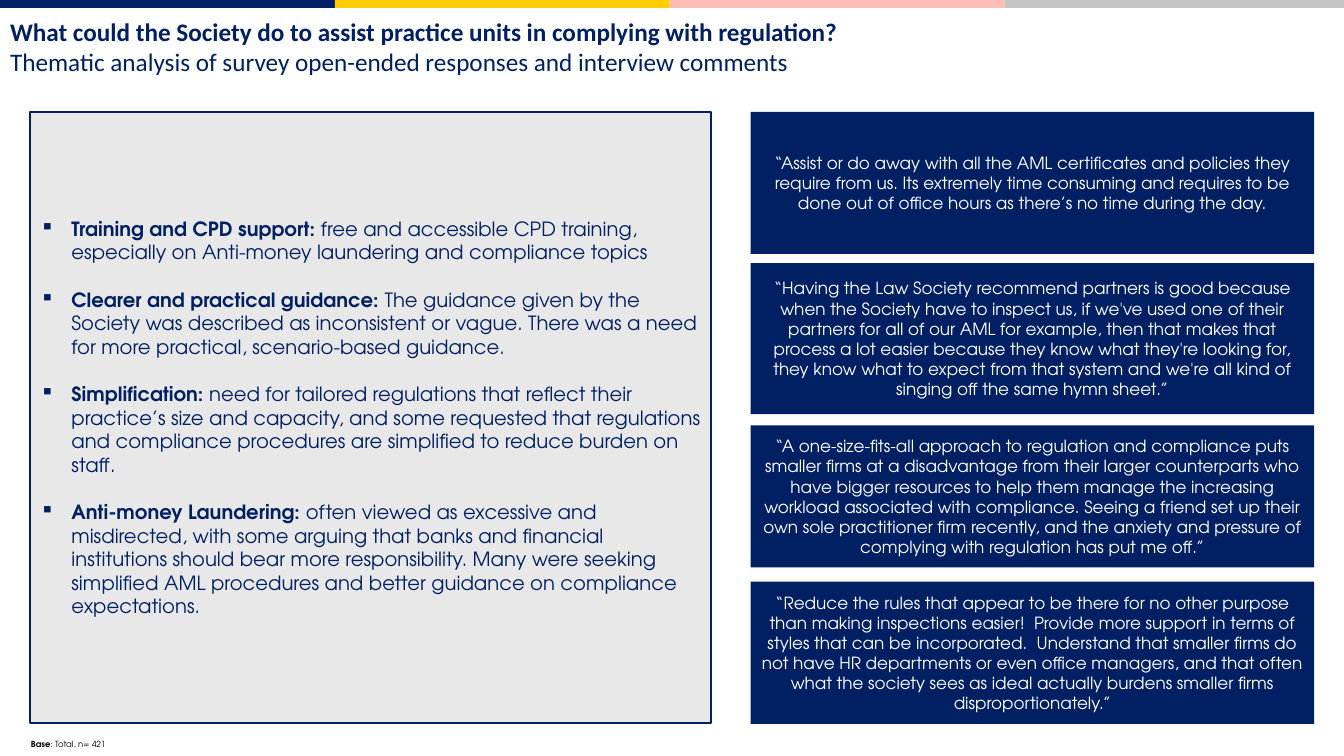
"""Build the slide on how the Society could help practice units comply with regulation."""
from lxml.etree import SubElement
from pptx import Presentation
from pptx.dml.color import RGBColor
from pptx.enum.shapes import MSO_SHAPE
from pptx.enum.text import MSO_ANCHOR, MSO_AUTO_SIZE, PP_ALIGN
from pptx.oxml.ns import qn
from pptx.util import Cm, Pt

NAVY, YELLOW, PINK, SILVER = "002063", "FFCD00", "FDBCB4", "C7C4C4"
PANEL, WHITE, BLACK = "E8E8E8", "FFFFFF", "000000"
BODY_FONT = "TeX Gyre Adventor"

TITLE_LINES = [
    ("What could the Society do to assist practice units in complying with regulation?", True),
    ("Thematic analysis of survey open-ended responses and interview comments", False),
]
THEMES = [
    ("Training and CPD support: ",
     "free and accessible CPD training, especially on Anti-money laundering and compliance topics"),
    ("Clearer and practical guidance: ",
     "The guidance given by the Society was described as inconsistent or vague. There was a need "
     "for more practical, scenario-based guidance."),
    ("Simplification: ",
     "need for tailored regulations that reflect their practice’s size and capacity, and some "
     "requested that regulations and compliance procedures are simplified to reduce burden on staff."),
    ("Anti-money Laundering: ",
     "often viewed as excessive and misdirected, with some arguing that banks and financial "
     "institutions should bear more responsibility. Many were seeking simplified AML procedures "
     "and better guidance on compliance expectations."),
]
QUOTES = [
    (2.82, 3.58,
     "“Assist or do away with all the AML certificates and policies they require from us. Its "
     "extremely time consuming and requires to be done out of office hours as there’s no time "
     "during the day."),
    (6.63, 3.81,
     "“Having the Law Society recommend partners is good because when the Society have to inspect "
     "us, if we've used one of their partners for all of our AML for example, then that makes that "
     "process a lot easier because they know what they're looking for, they know what to expect "
     "from that system and we're all kind of singing off the same hymn sheet.”"),
    (10.72, 3.58,
     "“A one-size-fits-all approach to regulation and compliance puts smaller firms at a "
     "disadvantage from their larger counterparts who have bigger resources to help them manage "
     "the increasing workload associated with compliance. Seeing a friend set up their own sole "
     "practitioner firm recently, and the anxiety and pressure of complying with regulation has "
     "put me off.”"),
    (14.66, 3.58,
     "“Reduce the rules that appear to be there for no other purpose than making inspections "
     "easier!  Provide more support in terms of styles that can be incorporated.  Understand that "
     "smaller firms do not have HR departments or even office managers, and that often what the "
     "society sees as ideal actually burdens smaller firms disproportionately.”"),
]


def style(font, size, colour, name=BODY_FONT):
    font.name, font.size = name, Pt(size)
    font.color.rgb = RGBColor.from_string(colour)


def add_block(page, left, top, width, height, fill):
    block = page.shapes.add_shape(MSO_SHAPE.RECTANGLE, Cm(left), Cm(top), Cm(width), Cm(height))
    block.shadow.inherit = False
    block.fill.solid()
    block.fill.fore_color.rgb = RGBColor.from_string(fill)
    block.line.fill.background()
    block.text_frame.word_wrap = True
    block.text_frame.vertical_anchor = MSO_ANCHOR.MIDDLE
    return block


deck = Presentation()
deck.slide_width, deck.slide_height = Cm(33.87), Cm(19.05)
page = deck.slides.add_slide(deck.slide_layouts[5])

title = page.shapes.title
title.left, title.top, title.width, title.height = Cm(0), Cm(0.28), Cm(32.79), Cm(1.8)
title.text_frame.auto_size = MSO_AUTO_SIZE.NONE
title.text_frame.vertical_anchor = MSO_ANCHOR.TOP
title.text_frame.text = "\n".join(line for line, bold in TITLE_LINES)
for para, (line, bold) in zip(title.text_frame.paragraphs, TITLE_LINES):
    para.alignment = PP_ALIGN.LEFT
    style(para.font, 18, NAVY, "Calibri")
    para.font.bold = bold

for index, colour in enumerate([NAVY, YELLOW, PINK, SILVER]):
    add_block(page, index * 8.44, 0, 8.55 if index == 3 else 8.44, 0.2, colour)

panel = add_block(page, 0.76, 2.82, 17.17, 15.39, PANEL)
panel.line.color.rgb = RGBColor.from_string(NAVY)
panel.line.width = Pt(1.5)
for index, (heading, detail) in enumerate(THEMES):
    para = panel.text_frame.paragraphs[0] if index == 0 else panel.text_frame.add_paragraph()
    para.alignment = PP_ALIGN.LEFT
    para.space_before = Pt(17 if index else 0)
    style(para.font, 14, NAVY)
    properties = para._p.get_or_add_pPr()
    properties.set("marL", str(Cm(0.79)))
    properties.set("indent", str(Cm(-0.79)))
    bullet = SubElement(properties, qn("a:buChar"), char="▪")
    properties.insert_element_before(bullet, "a:tabLst", "a:defRPr", "a:extLst")
    for text, bold in [(heading, True), (detail, False)]:
        span = para.add_run()
        span.text = text
        span.font.bold = bold

for top, height, quote in QUOTES:
    box = add_block(page, 18.92, top, 14.2, height, NAVY)
    para = box.text_frame.paragraphs[0]
    para.text = quote
    para.alignment = PP_ALIGN.CENTER
    style(para.font, 12, WHITE)

base = page.shapes.add_textbox(Cm(0.53), Cm(18.49), Cm(33.3), Cm(0.51))
base.text_frame.word_wrap = True
para = base.text_frame.paragraphs[0]
style(para.font, 6, BLACK)
for text, bold in [("Base", True), (": Total, n= 421", False)]:
    span = para.add_run()
    span.text = text
    span.font.bold = bold

deck.save("out.pptx")
